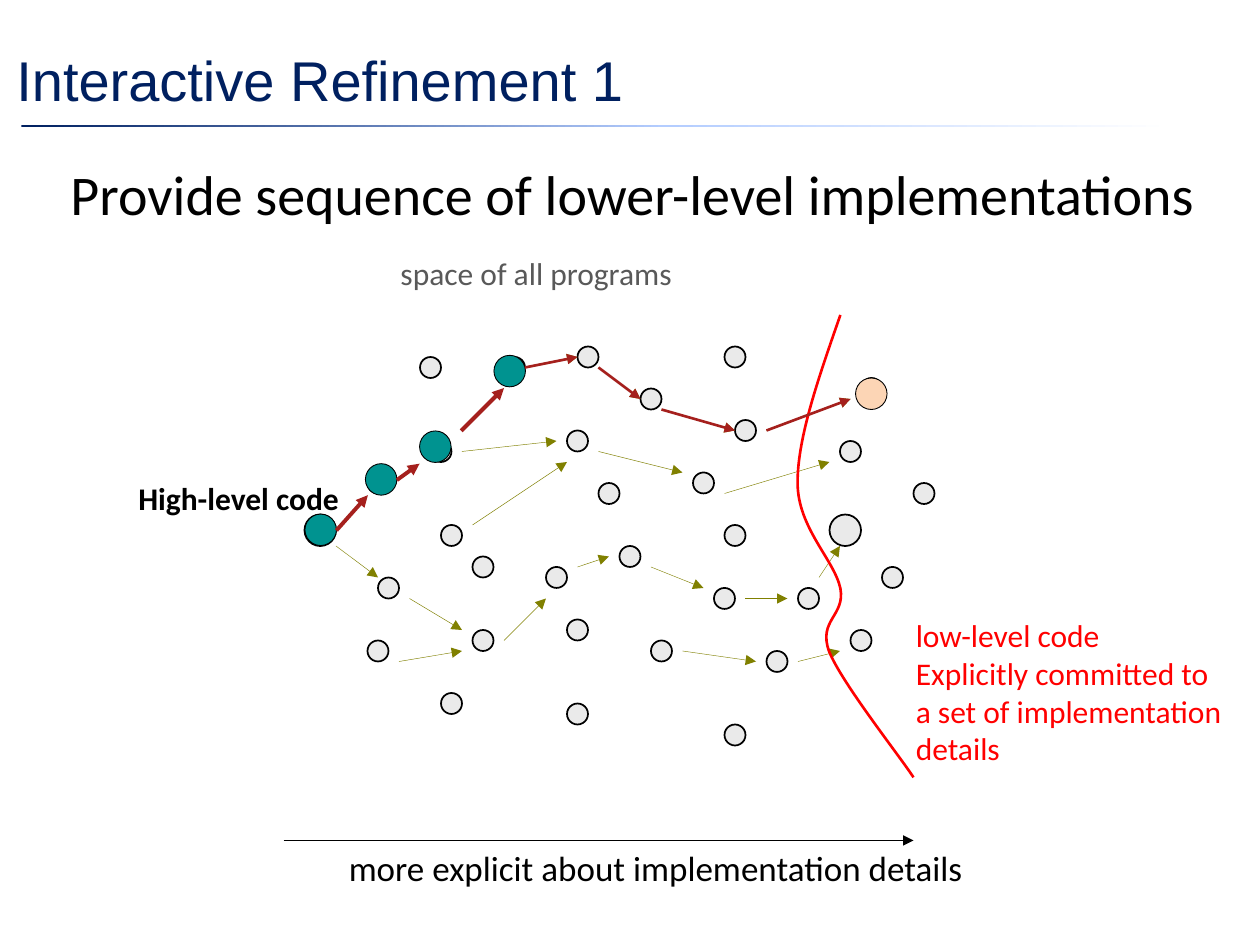
from copy import deepcopy

from lxml import etree
from pptx import Presentation
from pptx.dml.color import RGBColor
from pptx.enum.shapes import MSO_CONNECTOR, MSO_SHAPE
from pptx.enum.text import MSO_ANCHOR, MSO_AUTO_SIZE, PP_ALIGN
from pptx.oxml.ns import qn
from pptx.util import Inches, Pt

COLORS = {
    "navy": "002060", "sky": "B4CDFF", "white": "FFFFFF", "black": "000000",
    "grey": "595959", "dot": "EAEAEA", "teal": "009390", "peach": "FCD5B5",
    "olive": "808000", "crimson": "A5201D", "red": "FF0000",
}
GRID = 1 / 12  # programs and their arrows sit on a grid of twelfths of an inch
DOT_SIZE = 2 * GRID
STEP_SIZE = 0.25

# Left and top of each program, in grid units
PROGRAMS = [
    (40, 34), (48, 34), (55, 33), (61, 37), (69, 33), (57, 46), (69, 50),
    (45, 53), (54, 59), (42, 66), (35, 45), (54, 67), (84, 54), (69, 69),
    (87, 46), (36, 55), (45, 60), (52, 54), (59, 52), (68, 56), (76, 56),
    (41, 42), (42, 50), (62, 61), (66, 45), (35, 61), (54, 41), (70, 40),
    (73, 62), (81, 60), (80, 42), (82, 36),
]
LARGE_PROGRAMS = [(29, 49), (79, 49)]

# Start and end of each arrow, in grid units
POSSIBLE_STEPS = [
    (32, 52, 36, 55), (39, 57, 44, 60), (48, 61, 52, 57), (55, 54, 58, 53),
    (62, 54, 67, 56), (71, 57, 75, 57), (78, 55, 80, 52), (38, 63, 44, 62),
    (44, 43, 53, 42), (57, 43, 65, 45), (69, 47, 79, 44), (45, 50, 54, 44),
    (65, 62, 72, 63), (76, 63, 80, 62),
]
AUTOMATIC_STEPS = [
    (73, 41, 81, 38), (63, 39, 70, 41), (57, 35, 61, 38), (50, 35, 55, 34),
]

# Inches
USER_PROGRAMS = [(2.42, 4.08), (2.9, 3.68), (3.33, 3.42), (3.92, 2.82)]
USER_STEPS = [
    (2.67, 4.21, 2.92, 3.93), (3.15, 3.81, 3.33, 3.68), (3.66, 3.42, 4, 3.08),
]

# Hundredths of an inch, as freeform points are whole numbers
BOUNDARY_START = (667, 250)
BOUNDARY_CURVES = [  # two control points and an end point each
    [(650, 299), (633, 347), (633, 383)],
    [(633, 419), (662, 444), (667, 467)],
    [(671, 489), (649, 492), (658, 517)],
    [(668, 542), (714, 600), (725, 617)],
]


def color(name):
    return RGBColor.from_string(COLORS[name])


def scaled(points):
    return [tuple(value * GRID for value in point) for point in points]


def write(para, text, size, font, tint, bold=False):
    for number, line in enumerate(text.split("\n")):
        if number:
            para.add_line_break()
        span = para.add_run()
        span.text = line
        span.font.size = Pt(size)
        span.font.name = font
        span.font.bold = bold
        span.font.color.rgb = color(tint)


def add_title(page, text):
    title = page.shapes.title
    title.left, title.top = Inches(0.03), Inches(0)
    title.width, title.height = Inches(9.97), Inches(1.25)
    title.text_frame.vertical_anchor = MSO_ANCHOR.MIDDLE
    para = title.text_frame.paragraphs[0]
    para.alignment = PP_ALIGN.LEFT
    write(para, text, 32, "Arial", "navy")


def add_title_rule(page):
    rule = page.shapes.add_shape(
        MSO_SHAPE.RECTANGLE, Inches(0.17), Inches(0.99), Inches(9.83), Inches(0.02))
    rule.shadow.inherit = False
    rule.line.fill.background()
    rule.fill.gradient()
    rule.fill.gradient_angle = 0
    stop_list = rule._element.spPr.find(qn("a:gradFill")).find(qn("a:gsLst"))
    stop_list.append(deepcopy(stop_list[-1]))
    stops = [(0, "navy"), (0.52, "sky"), (0.93, "white")]
    for stop, (position, tint) in zip(rule.fill.gradient_stops, stops):
        stop.position = position
        stop.color.rgb = color(tint)


def add_text(page, text, left, top, width, height, size, tint="black",
             bold=False, wrap=False):
    box = page.shapes.add_textbox(
        Inches(left), Inches(top), Inches(width), Inches(height))
    frame = box.text_frame
    frame.word_wrap = wrap
    frame.auto_size = MSO_AUTO_SIZE.SHAPE_TO_FIT_TEXT
    write(frame.paragraphs[0], text, size, "Calibri", tint, bold)
    return box


def add_circle(page, left, top, size, fill, line_width):
    circle = page.shapes.add_shape(
        MSO_SHAPE.OVAL, Inches(left), Inches(top), Inches(size), Inches(size))
    circle.shadow.inherit = False
    circle.fill.solid()
    circle.fill.fore_color.rgb = color(fill)
    circle.line.color.rgb = color("black")
    circle.line.width = Pt(line_width)


def add_arrows(page, ends, tint, width):
    for end in ends:
        arrow = page.shapes.add_connector(
            MSO_CONNECTOR.STRAIGHT, *(Inches(value) for value in end))
        arrow.line.color.rgb = color(tint)
        arrow.line.width = Pt(width)
        etree.SubElement(arrow.line._get_or_add_ln(), qn("a:tailEnd"), type="triangle")
        etree.SubElement(arrow._element.spPr, qn("a:effectLst"))


def add_boundary(page):
    """Draw the red curve: each three straight segments become one Bezier."""
    points = [point for curve in BOUNDARY_CURVES for point in curve]
    builder = page.shapes.build_freeform(*BOUNDARY_START, scale=Inches(0.01))
    builder.add_line_segments(points, close=False)
    boundary = builder.convert_to_shape()
    segments = list(boundary._element.iter(qn("a:lnTo")))
    outline = segments[0].getparent()
    for first in range(0, len(segments), 3):
        bezier = etree.SubElement(outline, qn("a:cubicBezTo"))
        for segment in segments[first:first + 3]:
            bezier.append(segment[0])
            outline.remove(segment)
    boundary.shadow.inherit = False
    boundary.fill.background()
    boundary.line.color.rgb = color("red")
    boundary.line.width = Pt(1.5)


def main():
    deck = Presentation()
    deck.slide_width, deck.slide_height = Inches(10), Inches(7.5)
    page = deck.slides.add_slide(deck.slide_layouts[5])

    add_title_rule(page)
    add_title(page, "Interactive Refinement 1")
    statement = add_text(page, "Provide sequence of lower-level implementations",
                         0.33, 1.22, 9.63, 0.64, 32, wrap=True)
    statement.text_frame.margin_left = Inches(0.23)

    for left, top in scaled(PROGRAMS):
        add_circle(page, left, top, DOT_SIZE, "dot", 1)
    for left, top in scaled(LARGE_PROGRAMS):
        add_circle(page, left, top, STEP_SIZE, "dot", 1)
    add_arrows(page, scaled(POSSIBLE_STEPS + AUTOMATIC_STEPS), "olive", 0.25)

    add_text(page, "more explicit about implementation details",
             2.67, 6.67, 5.3, 0.44, 20)
    add_text(page, "High-level code", 1, 3.75, 1.86, 0.4, 18, bold=True)
    add_text(page, "space of all programs", 3.08, 1.97, 2.48, 0.4, 18, "grey")
    add_boundary(page)
    add_text(page, "low-level code\nExplicitly committed to \n"
             "a set of implementation \ndetails",
             7.17, 4.84, 2.8, 1.31, 18, "red", wrap=True)
    add_arrows(page, [(2.25, 6.67, 7.25, 6.67)], "black", 0.75)

    for left, top in USER_PROGRAMS:
        add_circle(page, left, top, STEP_SIZE, "teal", 0.5)
    add_circle(page, 6.79, 3, STEP_SIZE, "peach", 0.5)
    add_arrows(page, USER_STEPS, "crimson", 2.25)
    add_arrows(page, scaled(AUTOMATIC_STEPS), "crimson", 1.5)

    deck.save("out.pptx")


if __name__ == "__main__":
    main()
